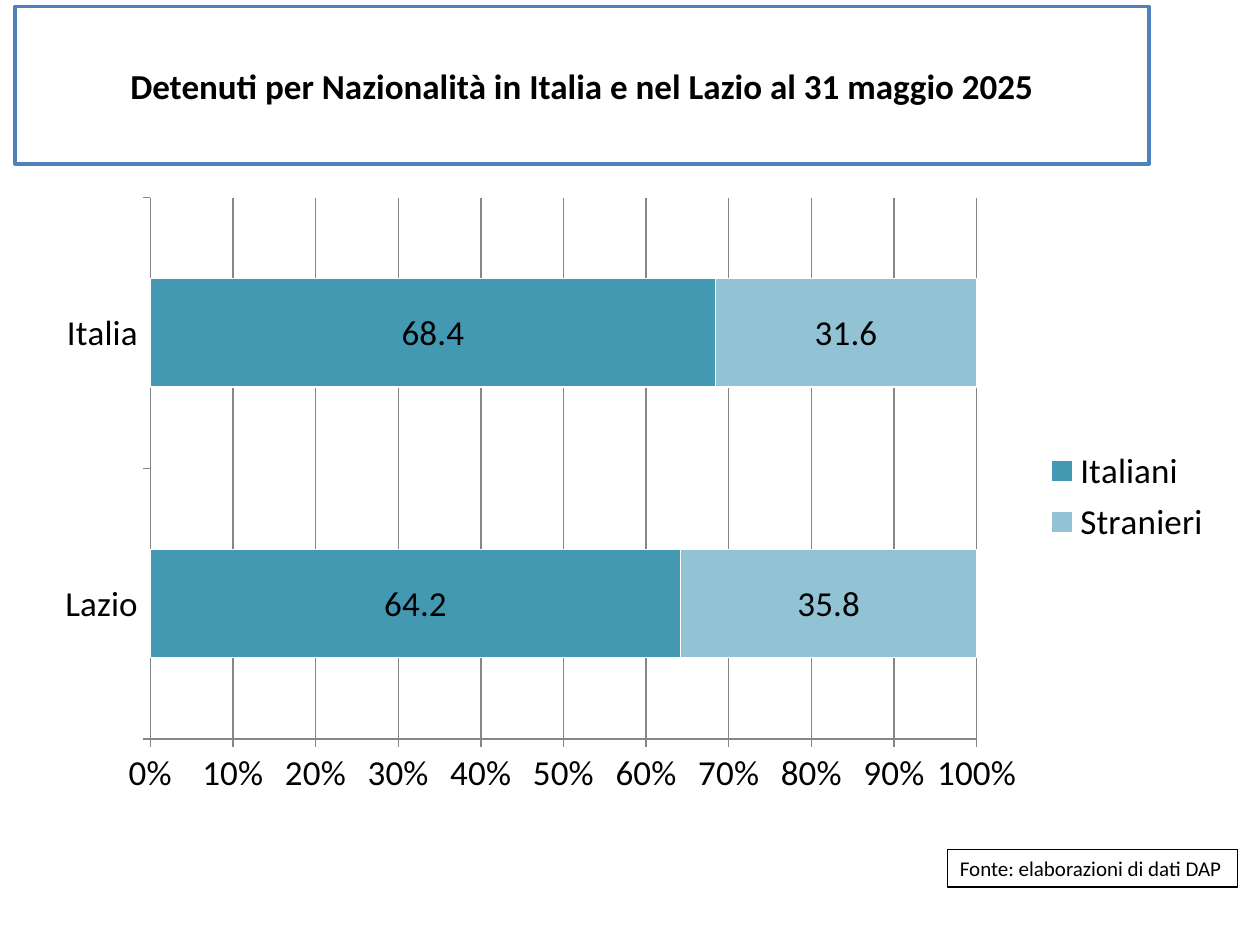
from lxml import etree
from pptx import Presentation
from pptx.chart.data import CategoryChartData
from pptx.dml.color import RGBColor
from pptx.enum.chart import XL_CHART_TYPE as ChartType, XL_LABEL_POSITION as LabelPos
from pptx.enum.chart import XL_LEGEND_POSITION as LegendPos, XL_TICK_MARK as Tick
from pptx.enum.text import MSO_ANCHOR, MSO_AUTO_SIZE, PP_ALIGN
from pptx.oxml.ns import qn
from pptx.util import Inches, Pt

COLORS = {"text": "000000", "paper": "FFFFFF", "frame": "4F81BD", "grid": "868686",
          "Italiani": "4399B1", "Stranieri": "92C3D5"}
FONT = "Calibri"
SHARES = {"Italiani": (64.2, 68.4), "Stranieri": (35.8, 31.6)}

deck = Presentation()
deck.slide_width, deck.slide_height = Inches(10), Inches(7.5)
slide = deck.slides.add_slide(deck.slide_layouts[5])


def area(left, top, width, height):
    """Turn percentages of the slide into a position and size."""
    w, h = deck.slide_width, deck.slide_height
    return [int(share * side / 100)
            for share, side in zip((left, top, width, height), (w, h, w, h))]


def framed_text(box, text, size, line_color, line_width, bold=False):
    box.fill.solid()
    box.fill.fore_color.rgb = RGBColor.from_string(COLORS["paper"])
    box.line.color.rgb = RGBColor.from_string(COLORS[line_color])
    box.line.width = Pt(line_width)
    run = box.text_frame.paragraphs[0].add_run()
    run.text = text
    run.font.name, run.font.size, run.font.bold = FONT, Pt(size), bold
    run.font.color.rgb = RGBColor.from_string(COLORS["text"])


# Title
title = slide.shapes.title
title.left, title.top, title.width, title.height = area(1.2, 0.67, 90, 16.67)
framed_text(title, "Detenuti per Nazionalità in Italia e nel Lazio al 31 maggio 2025",
            20, "frame", 2, bold=True)
title.text_frame.vertical_anchor = MSO_ANCHOR.MIDDLE
title.text_frame.paragraphs[0].alignment = PP_ALIGN.CENTER

# Source note
source = slide.shapes.add_textbox(*area(75.2, 89.87, 23, 4))
framed_text(source, "Fonte: elaborazioni di dati DAP", 12, "text", 0.75)
source.text_frame.word_wrap = False
source.text_frame.auto_size = MSO_AUTO_SIZE.SHAPE_TO_FIT_TEXT

# Nationality chart
data = CategoryChartData(number_format="0.0")
data.categories = ["Lazio", "Italia"]
for nationality, values in SHARES.items():
    data.add_series(nationality, values)
chart = slide.shapes.add_chart(ChartType.BAR_STACKED_100,
                               *area(3.5, 19.6, 93.7, 65.87), data).chart
chart.has_title = False
chart.font.name, chart.font.size = FONT, Pt(20)
chart.font.color.rgb = RGBColor.from_string(COLORS["text"])
chart.has_legend = True
chart.legend.position = LegendPos.RIGHT
chart.legend.include_in_layout = False

plot = chart.plots[0]
plot.gap_width, plot.overlap, plot.vary_by_categories = 150, 100, False
for series in plot.series:
    series.format.fill.solid()
    series.format.fill.fore_color.rgb = RGBColor.from_string(COLORS[series.name])
    series.format.line.color.rgb = RGBColor.from_string(COLORS["paper"])
    series.format.line.width = Pt(0.75)
    labels = series.data_labels
    labels.show_value = True
    labels.position = LabelPos.CENTER
    labels.number_format, labels.number_format_is_linked = "0.0", False

percent, regions = chart.value_axis, chart.category_axis
percent.minimum_scale, percent.maximum_scale, percent.major_unit = 0, 1, 0.1
percent.tick_labels.number_format = "0%"
percent.tick_labels.number_format_is_linked = False
percent.has_major_gridlines = True
for axis in (percent, regions):
    axis.major_tick_mark, axis.minor_tick_mark = Tick.OUTSIDE, Tick.NONE
for stroke in (percent.format.line, regions.format.line, percent.major_gridlines.format.line):
    stroke.color.rgb = RGBColor.from_string(COLORS["grid"])
    stroke.width = Pt(0.75)

# Inner plot area, as shares of the chart
plot_area = plot_area_xml = chart.element.find(".//" + qn("c:plotArea"))
for old_layout in plot_area.findall(qn("c:layout")):
    plot_area.remove(old_layout)
layout = etree.Element(qn("c:layout"))
plot_area.insert(0, layout)
manual = etree.SubElement(layout, qn("c:manualLayout"))
for tag, value in (("layoutTarget", "inner"), ("xMode", "edge"), ("yMode", "edge"),
                   ("x", "0.09"), ("y", "0.02"), ("w", "0.7"), ("h", "0.87")):
    etree.SubElement(manual, qn("c:" + tag)).set("val", value)

deck.save("out.pptx")
